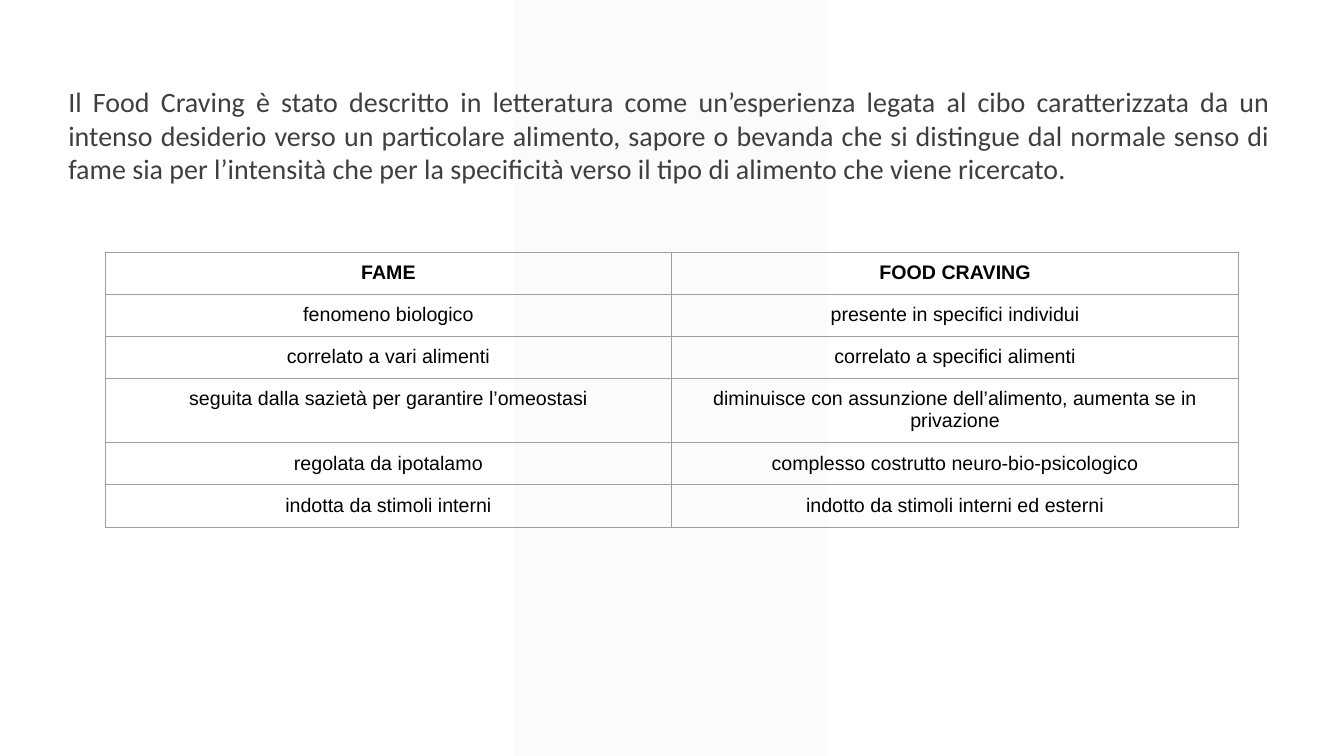
from lxml.etree import SubElement
from pptx import Presentation
from pptx.dml.color import RGBColor
from pptx.enum.shapes import MSO_SHAPE
from pptx.enum.text import MSO_ANCHOR, MSO_AUTO_SIZE, PP_ALIGN
from pptx.oxml.ns import qn
from pptx.util import Cm, Pt

PALE = RGBColor(0xF2, 0xF2, 0xF2)
DARK = RGBColor(0x3F, 0x3F, 0x3F)
BLACK = RGBColor(0, 0, 0)
GRID = RGBColor(0x9E, 0x9E, 0x9E)
PAD = Cm(0.25)

INTRO = (
    "Il Food Craving è stato descritto in letteratura come un’esperienza legata al cibo "
    "caratterizzata da un intenso desiderio verso un particolare alimento, sapore o bevanda "
    "che si distingue dal normale senso di fame sia per l’intensità che per la specificità "
    "verso il tipo di alimento che viene ricercato."
)
ROWS = [
    ("FAME", "FOOD CRAVING"),
    ("fenomeno biologico", "presente in specifici individui"),
    ("correlato a vari alimenti", "correlato a specifici alimenti"),
    ("seguita dalla sazietà per garantire l’omeostasi",
     "diminuisce con assunzione dell’alimento, aumenta se in privazione"),
    ("regolata da ipotalamo", "complesso costrutto neuro-bio-psicologico"),
    ("indotta da stimoli interni", "indotto da stimoli interni ed esterni"),
]


def style(para, font, size, color, align):
    para.alignment = align
    para.font.name = font
    para.font.size = Pt(size)
    para.font.color.rgb = color


def border(cell):
    props = cell._tc.get_or_add_tcPr()
    for side in ("a:lnL", "a:lnR", "a:lnT", "a:lnB"):
        line = SubElement(props, qn(side), w=str(Pt(0.75)))
        fill = SubElement(line, qn("a:solidFill"))
        SubElement(fill, qn("a:srgbClr"), val=str(GRID))


deck = Presentation()
deck.slide_width = Cm(33.87)
deck.slide_height = Cm(19.05)
slide = deck.slides.add_slide(deck.slide_layouts[1])
shapes = slide.shapes
tree = shapes.title.element.getparent()
tree.remove(shapes.title.element)

band = shapes.add_shape(MSO_SHAPE.PARALLELOGRAM, Cm(12.95), 0, Cm(7.92), deck.slide_height)
band.adjustments[0] = 0
band.shadow.inherit = False
band.line.fill.background()
band.fill.solid()
band.fill.fore_color.rgb = PALE
tint = band.element.spPr.find(qn("a:solidFill")).find(qn("a:srgbClr"))
SubElement(tint, qn("a:alpha"), val="30000")
tree.insert(2, band.element)

body = slide.placeholders[1]
body.left, body.top, body.width, body.height = Cm(1.47), Cm(1.88), Cm(30.78), Cm(13.13)
frame = body.text_frame
frame.text = INTRO
frame.word_wrap = True
frame.auto_size = MSO_AUTO_SIZE.NONE
frame.vertical_anchor = MSO_ANCHOR.TOP
frame.margin_left = frame.margin_right = frame.margin_top = frame.margin_bottom = PAD
intro = frame.paragraphs[0]
style(intro, "Calibri", 20, DARK, PP_ALIGN.JUSTIFY)
intro.space_before = Pt(0)
props = intro._p.get_or_add_pPr()
props.set("marL", "0")
props.set("indent", "0")
props.insert_element_before(props.makeelement(qn("a:buNone")), "a:tabLst", "a:defRPr", "a:extLst")

high = Cm(1.06)
table = shapes.add_table(len(ROWS), 2, Cm(2.65), Cm(6.35), Cm(28.56), high * len(ROWS)).table
table.first_row = False
table.horz_banding = False
for r, words in enumerate(ROWS):
    table.rows[r].height = Cm(1.63) if r == 3 else high
    for c, word in enumerate(words):
        cell = table.cell(r, c)
        cell.text = word
        cell.margin_left = cell.margin_right = cell.margin_top = cell.margin_bottom = PAD
        para = cell.text_frame.paragraphs[0]
        style(para, "Arial", 14, BLACK, PP_ALIGN.CENTER)
        para.font.bold = r == 0
        border(cell)
        cell.fill.background()

deck.save("out.pptx")
